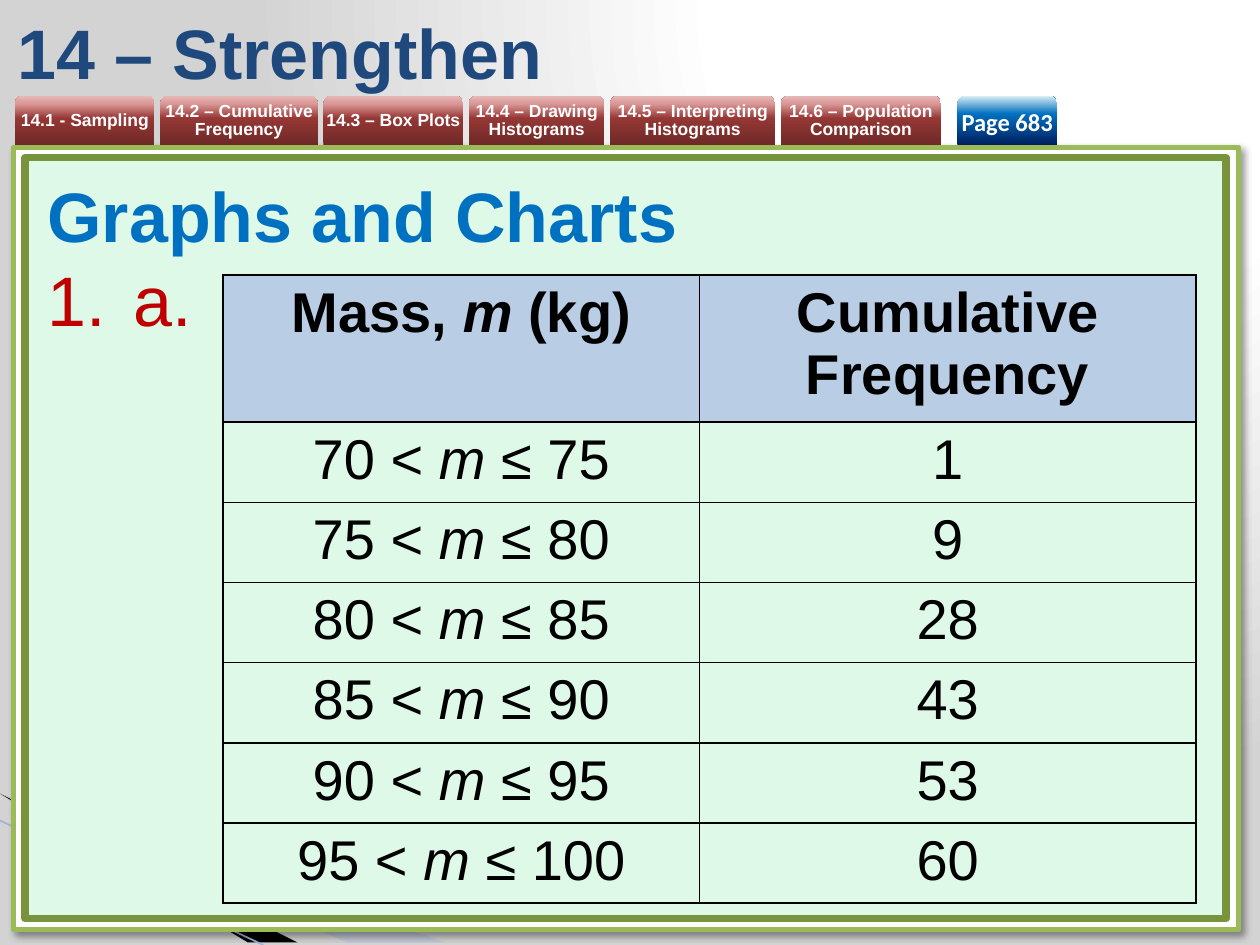
"""Build the Strengthen slide with its topic tabs and cumulative frequency table."""
from lxml import etree
from pptx import Presentation
from pptx import util as u
from pptx.dml.color import RGBColor
from pptx.enum import shapes, text
from pptx.oxml.ns import nsdecls, qn

MIDDLE, TOP = text.MSO_ANCHOR.MIDDLE, text.MSO_ANCHOR.TOP
CENTER = text.PP_ALIGN.CENTER
UPWARD = '<a:lin ang="16200000" scaled="0"/>'
CORNER = '<a:path path="circle"><a:fillToRect l="65000" b="98000"/></a:path>'
RED_STOPS = [(0, "6F2927"), (54, "953735"), (83, "D99694"), (100, "E6B9B8")]
BLUE_STOPS = [(0, "002060"), (63, "0070C0"), (100, "DBEEF4")]
PAGE_STOPS = [(0, "FFFFFF"), (40, "FFFFFF"), (100, "D3D3D3")]
TOPICS = [
    ("14.1 - Sampling", 2.82),
    ("14.2 – Cumulative Frequency", 3.18),
    ("14.3 – Box Plots", 2.82),
    ("14.4 – Drawing Histograms", 2.74),
    ("14.5 – Interpreting Histograms", 3.33),
    ("14.6 – Population Comparison", 3.23),
]
CUMULATIVE = [1, 9, 28, 43, 53, 60]


def colour(value):
    return RGBColor.from_string(value)


def add_xml(parent, tag, body="", **attributes):
    fields = "".join(f' {name}="{value}"' for name, value in attributes.items())
    child = etree.fromstring(f'<a:{tag} {nsdecls("a")}{fields}>{body}</a:{tag}>')
    parent.append(child)
    return child


def add_gradient(element, stops, direction):
    empty = element.find(".//" + qn("a:noFill"))
    marks = "".join(
        f'<a:gs pos="{place * 1000}"><a:srgbClr val="{value}"/></a:gs>' for place, value in stops
    )
    parent = empty.getparent()
    fill = add_xml(parent, "gradFill", f"<a:gsLst>{marks}</a:gsLst>{direction}", rotWithShape=1)
    parent.replace(empty, fill)


def write(para, words, size=40, ink="000000", font="Arial", bold=False, align=None):
    """Add text to a paragraph, with the parts between asterisks in italics."""
    para.alignment = align
    for index, part in enumerate(words.split("*")):
        span = para.add_run()
        span.text = part
        span.font.size, span.font.name = u.Pt(size), font
        span.font.bold, span.font.italic = bold, index % 2 == 1
        span.font.color.rgb = colour(ink)


class SlideMaker:
    def __init__(self, page, border="000000", margin=0.13):
        self.page, self.border, self.margin = page, border, margin

    def finish(self, shape, fill, line=None, width=0):
        shape.shadow.inherit = False
        if isinstance(fill, list):
            shape.fill.background()
            add_gradient(shape._element.spPr, fill, UPWARD)
        else:
            shape.fill.solid()
            shape.fill.fore_color.rgb = colour(fill)
        if line:
            shape.line.color.rgb = colour(line)
            shape.line.width = u.Pt(width)
        else:
            shape.line.fill.background()
        return shape

    def outline(self, points, fill):
        builder = self.page.shapes.build_freeform(*points[0], scale=u.Cm(1))
        builder.add_line_segments(points[1:], close=True)
        return self.finish(builder.convert_to_shape(), fill)

    def connector(self, start, end, line, width):
        ends = [u.Cm(value) for value in start + end]
        link = self.page.shapes.add_connector(shapes.MSO_CONNECTOR.STRAIGHT, *ends)
        link.line.color.rgb = colour(line)
        link.line.width = u.Pt(width)
        add_xml(link._element.spPr, "effectLst")

    def panel(self, place, fill, line, width):
        spot = [u.Cm(value) for value in place]
        shape = self.page.shapes.add_shape(shapes.MSO_SHAPE.RECTANGLE, *spot)
        return self.finish(shape, fill, line, width)

    def tab(self, left, width, words, stops, spacing=None, **style):
        shape = self.page.shapes.add_shape(
            shapes.MSO_SHAPE.ROUND_2_SAME_RECTANGLE, u.Cm(left), u.Cm(1.93), u.Cm(width), u.Cm(0.99)
        )
        self.finish(shape, stops)
        frame = shape.text_frame
        frame.margin_left = frame.margin_right = frame.margin_top = frame.margin_bottom = 0
        frame.word_wrap, frame.vertical_anchor = True, MIDDLE
        para = frame.paragraphs[0]
        if spacing:
            para.line_spacing = u.Pt(spacing)
        write(para, words, ink="FFFFFF", bold=True, align=CENTER, **style)

    def text_box(self, place, anchor):
        box = self.page.shapes.add_textbox(*[u.Cm(value) for value in place])
        box.text_frame.word_wrap = True
        box.text_frame.vertical_anchor = anchor
        return box.text_frame

    def table(self, left, top, widths, heights, rows):
        grid = self.page.shapes.add_table(
            len(rows), len(widths), u.Cm(left), u.Cm(top), u.Cm(sum(widths)), u.Cm(sum(heights))
        ).table
        grid.first_row = grid.horz_banding = False
        for column, width in zip(grid.columns, widths):
            column.width = u.Cm(width)
        for index, (row, height, values) in enumerate(zip(grid.rows, heights, rows)):
            row.height = u.Cm(height)
            for cell, words in zip(row.cells, values):
                self.cell(cell, words, header=index == 0)

    def cell(self, cell, words, header):
        cell.margin_left = cell.margin_right = u.Cm(self.margin)
        cell.margin_top = cell.margin_bottom = u.Cm(self.margin)
        write(cell.text_frame.paragraphs[0], words, size=32, bold=header, align=CENTER)
        properties = cell._tc.get_or_add_tcPr()
        ink = f'<a:solidFill><a:srgbClr val="{self.border}"/></a:solidFill>'
        for side in ("lnL", "lnR", "lnT", "lnB"):
            add_xml(properties, side, ink, w=u.Pt(1))
        if header:
            cell.fill.solid()
            cell.fill.fore_color.rgb = colour("B9CDE5")
        else:
            cell.fill.background()


def main():
    deck = Presentation()
    deck.slide_width, deck.slide_height = u.Cm(25.4), u.Cm(19.05)
    page = deck.slides.add_slide(deck.slide_layouts[6])
    page.background.fill.background()
    add_gradient(page._element, PAGE_STOPS, CORNER)
    maker = SlideMaker(page)

    ribbon = maker.outline([(0, 16.48), (8.86, 19.05), (6.58, 19.05)], "A7B9DB")
    add_xml(ribbon._element.spPr.find(".//" + qn("a:srgbClr")), "alpha", val=40000)
    maker.outline([(0, 16.46), (6.5, 19.05), (5.13, 19.05), (0.03, 16.48)], "000000")
    maker.connector((0, 16.54), (5.31, 19.05), "9EB3D6", 0.95)

    frame = maker.panel((0.28, 2.97, 24.69, 15.77), "FFFFFF", "9BBB59", 3)
    shade = '<a:srgbClr val="000000"><a:alpha val="40000"/></a:srgbClr>'
    effects = frame._element.spPr.find(qn("a:effectLst"))
    add_xml(effects, "outerShdw", shade, blurRad=u.Pt(4), dist=u.Pt(3), dir=45 * 60000)
    maker.panel((0.51, 3.18, 24.21, 15.34), "DFF9E8", "77933C", 4.33)

    left, gap = 0.3, 0.11
    for topic, width in TOPICS:
        maker.tab(left, width, topic, RED_STOPS, spacing=10, size=10)
        left += width + gap
    maker.tab(19.3, 2.01, "Page 683", BLUE_STOPS, size=14, font="Calibri")

    title = maker.text_box((0.1, 0.13, 21.41, 1.8), MIDDLE)
    write(title.paragraphs[0], "14 – Strengthen", ink="1F497D", bold=True)
    body = maker.text_box((0.71, 3.35, 23.8, 3.68), TOP)
    write(body.paragraphs[0], "Graphs and Charts", ink="0070C0", bold=True)
    question = body.add_paragraph()
    properties = question._p.get_or_add_pPr()
    properties.set("marL", str(u.Cm(1.73)))
    properties.set("indent", str(-u.Cm(1.73)))
    add_xml(properties, "buClr", '<a:srgbClr val="C00000"/>')
    add_xml(properties, "buFont", typeface="+mj-lt")
    add_xml(properties, "buAutoNum", type="arabicPeriod")
    write(question, "a.", ink="C00000")

    rows = [("Mass, *m* (kg)", "Cumulative Frequency")]
    for low, total in zip(range(70, 100, 5), CUMULATIVE):
        rows.append((f"{low} < *m* ≤ {low + 5}", str(total)))
    maker.table(4.5, 5.54, [9.6, 10.01], [2.96] + [1.61] * len(CUMULATIVE), rows)
    deck.save("out.pptx")


if __name__ == "__main__":
    main()
